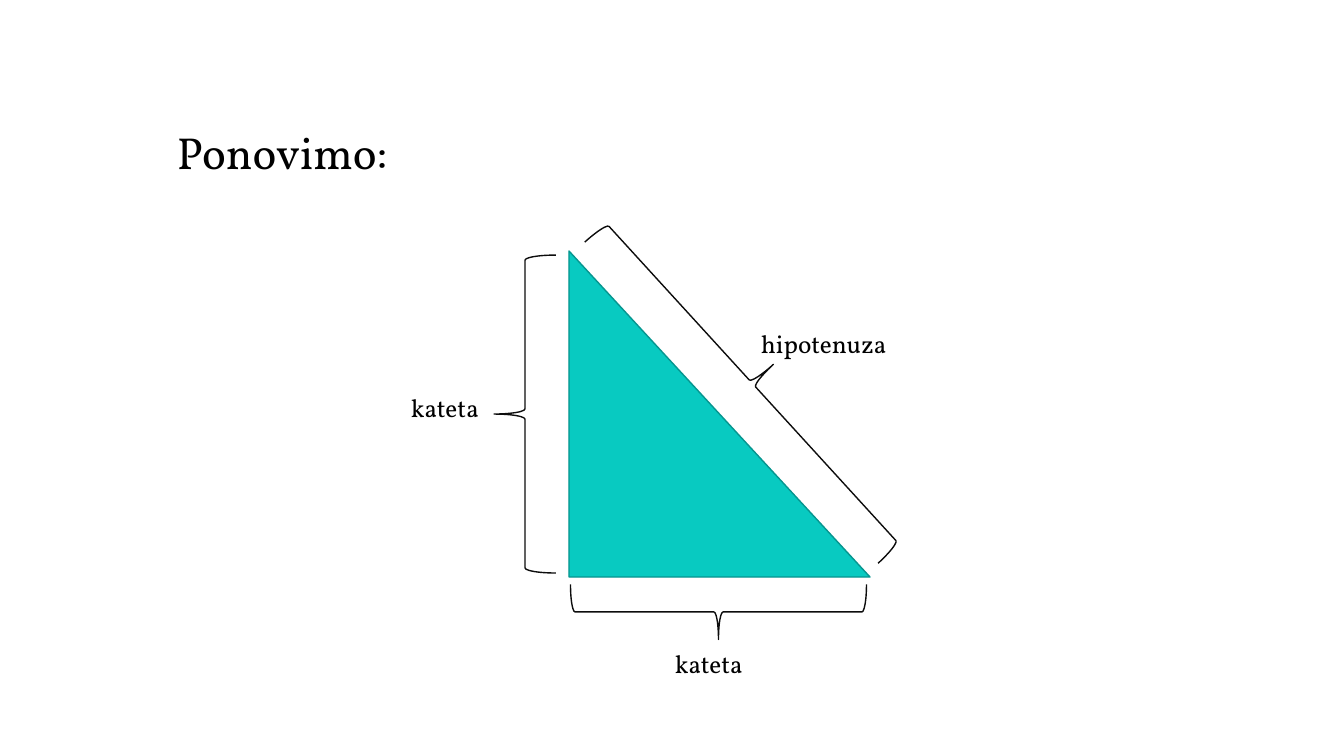
from pptx import Presentation
from pptx.dml.color import RGBColor
from pptx.enum.shapes import MSO_SHAPE
from pptx.enum.text import MSO_ANCHOR
from pptx.util import Pt

TRIANGLE = MSO_SHAPE.RIGHT_TRIANGLE
BRACE = MSO_SHAPE.RIGHT_BRACE
TOP, BOTTOM = MSO_ANCHOR.TOP, MSO_ANCHOR.BOTTOM
PX = 914400 / 100.8


def px(*lengths):
    return [round(n * PX) for n in lengths]


def color(hex_value):
    return RGBColor.from_string(hex_value)


prs = Presentation()
prs.slide_width, prs.slide_height = px(1344, 756)
s = prs.slides.add_slide(prs.slide_layouts[6])

# Triangle and the braces along its sides
shapes = [
    (TRIANGLE, (569, 251, 301, 326), 0, "08CAC1", "06958F"),
    (BRACE, (724, 166, 57, 435), 317.6, None, "0D0D0D"),  # hypotenuse
    (BRACE, (691, 464, 55, 296), 90, None, "0D0D0D"),  # lower leg
    (BRACE, (494, 255, 62, 318), 180, None, "0D0D0D"),  # left leg
]
for kind, box, rotation, fill, line in shapes:
    sp = s.shapes.add_shape(kind, *px(*box))
    sp.shadow.inherit = False
    sp.rotation = rotation
    if fill:
        sp.fill.solid()
        sp.fill.fore_color.rgb = color(fill)
    else:
        sp.fill.background()
    sp.line.color.rgb = color(line)
    sp.line.width = Pt(1)

# Title and side labels: text, box, left inset, size, anchor, line spacing
texts = [
    ("Ponovimo:", (167, 58, 1058, 126), 10, 32, BOTTOM, 0.9),
    ("hipotenuza", (751, 323, 238, 40), 10, 18, TOP, 1.0),
    ("kateta", (605, 643, 230, 40), 70, 18, TOP, 1.0),
    ("kateta", (370, 387, 138, 40), 41, 18, TOP, 1.0),
]
for text, box, inset, size, anchor, spacing in texts:
    tf = s.shapes.add_textbox(*px(*box)).text_frame
    frame = {"word_wrap": True, "vertical_anchor": anchor,
             "margin_left": px(inset)[0]}
    for name, value in frame.items():
        setattr(tf, name, value)
    p = tf.paragraphs[0]
    p.line_spacing = spacing
    r = p.add_run()
    r.text = text
    for name, value in {"name": "Vollkorn", "size": Pt(size)}.items():
        setattr(r.font, name, value)
    r.font.color.rgb = color("000000")

prs.save("out.pptx")
